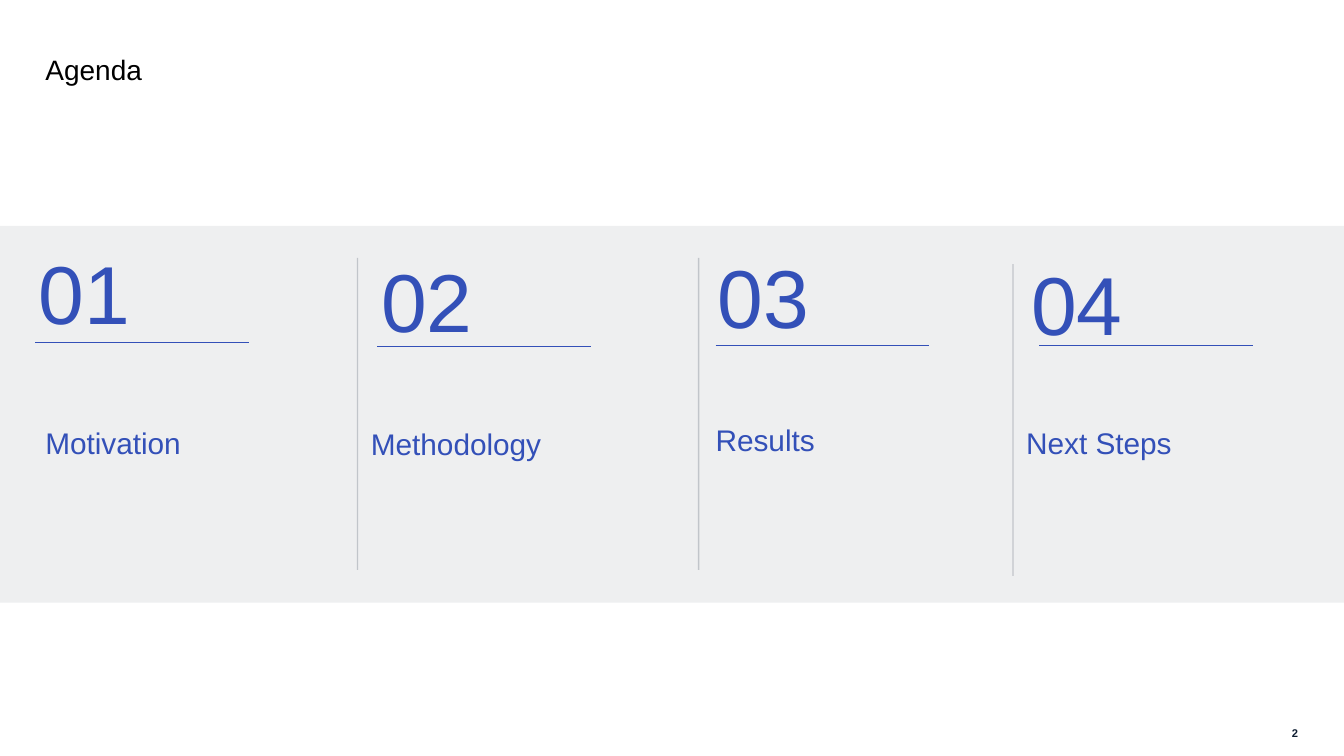
from lxml import etree
from pptx import Presentation
from pptx.dml.color import RGBColor
from pptx.enum import shapes, text
from pptx.oxml import ns
from pptx.util import Pt

# Content: number, label, number (x, y), label (x, y, width), rule (x, y)
TITLE = "Agenda"
PAGE = "2"
PARTS = [
    ("01", "Motivation", (27.4, 161.3), (32.4, 302.4, 264.2), (25.2, 244.8)),
    ("02", "Methodology", (272.2, 167), (265, 303.1, 208), (269.3, 247.7)),
    ("03", "Results", (512.6, 164.2), (511.2, 300.2, 208), (511.2, 247)),
    ("04", "Next Steps", (736.6, 169.2), (733, 302.4, 264.2), (742.5, 247)),
]
BARS = [(255.4, 184.3), (499, 184.3), (723.6, 188.6)]
RULE_W, BAR_H = 152.5, 222.7
HUES = {"navy": "0F1E32", "blue": "3350B8", "black": "000000"}
FONT = "Arial"

deck = Presentation()
deck.slide_width, deck.slide_height = Pt(960), Pt(540)
page = deck.slides.add_slide(deck.slide_layouts[5])


def fade(fill, share):
    """Set the opacity of a solid fill in percent."""
    tone = fill._xPr.find(".//" + ns.qn("a:srgbClr"))
    etree.SubElement(tone, ns.qn("a:alpha"), val=str(share * 1000))


def write(words, box, size, hue="blue", bold=False, align=text.PP_ALIGN.LEFT,
          anchor=text.MSO_ANCHOR.TOP, inset=(0, 0, 0, 0), wrap=True,
          fit=text.MSO_AUTO_SIZE.NONE, shape=None):
    box = [Pt(n) for n in box]
    if shape is None:
        shape = page.shapes.add_textbox(*box)
    else:
        shape.left, shape.top, shape.width, shape.height = box
    frame = shape.text_frame
    frame.text = words
    frame.word_wrap, frame.auto_size = wrap, fit
    frame.vertical_anchor = anchor
    frame.margin_left, frame.margin_top, frame.margin_right, frame.margin_bottom = [
        Pt(n) for n in inset]
    para = frame.paragraphs[0]
    para.alignment = align
    font = para.runs[0].font
    font.name, font.size, font.bold = FONT, Pt(size), bold
    font.color.rgb = RGBColor.from_string(HUES[hue])


def rule(x, y, wide, high, hue, share=100):
    line = page.shapes.add_connector(
        shapes.MSO_CONNECTOR.STRAIGHT, Pt(x), Pt(y), Pt(x + wide), Pt(y + high))
    line.line.width = Pt(1)
    line.line.color.rgb = RGBColor.from_string(HUES[hue])
    if share < 100:
        fade(line.line.fill, share)
    etree.SubElement(line._element.spPr, ns.qn("a:effectLst"))


# Tinted band
band = page.shapes.add_shape(
    shapes.MSO_SHAPE.RECTANGLE, 0, Pt(161.3), Pt(960), Pt(269.2))
band.shadow.inherit = False
band.fill.solid()
band.fill.fore_color.rgb = RGBColor.from_string(HUES["navy"])
fade(band.fill, 7)
band.line.fill.background()

# Title and page number
write(TITLE, (32.4, 37.4, 710.6, 64.1), 20, hue="black", shape=page.shapes.title)
write(PAGE, (889.9, 514.1, 37.4, 18.7), 8, hue="navy", bold=True,
      align=text.PP_ALIGN.RIGHT, anchor=text.MSO_ANCHOR.MIDDLE)

# Column dividers
for x, y in BARS:
    rule(x, y, 0, BAR_H, "navy", 20)

# Agenda columns
GROW = text.MSO_AUTO_SIZE.SHAPE_TO_FIT_TEXT
for num, label, spot, (x, y, wide), start in PARTS:
    write(label, (x, y, wide, 52.6), 21.3, anchor=text.MSO_ANCHOR.BOTTOM,
          inset=(0, 0, 0, 26.6), fit=GROW)
    write(num, (*spot, 88.6, 82.8), 58.7, inset=(0, 11.5, 22.3, 0),
          wrap=False, fit=GROW)
    rule(*start, RULE_W, 0, "blue")

deck.save("out.pptx")
